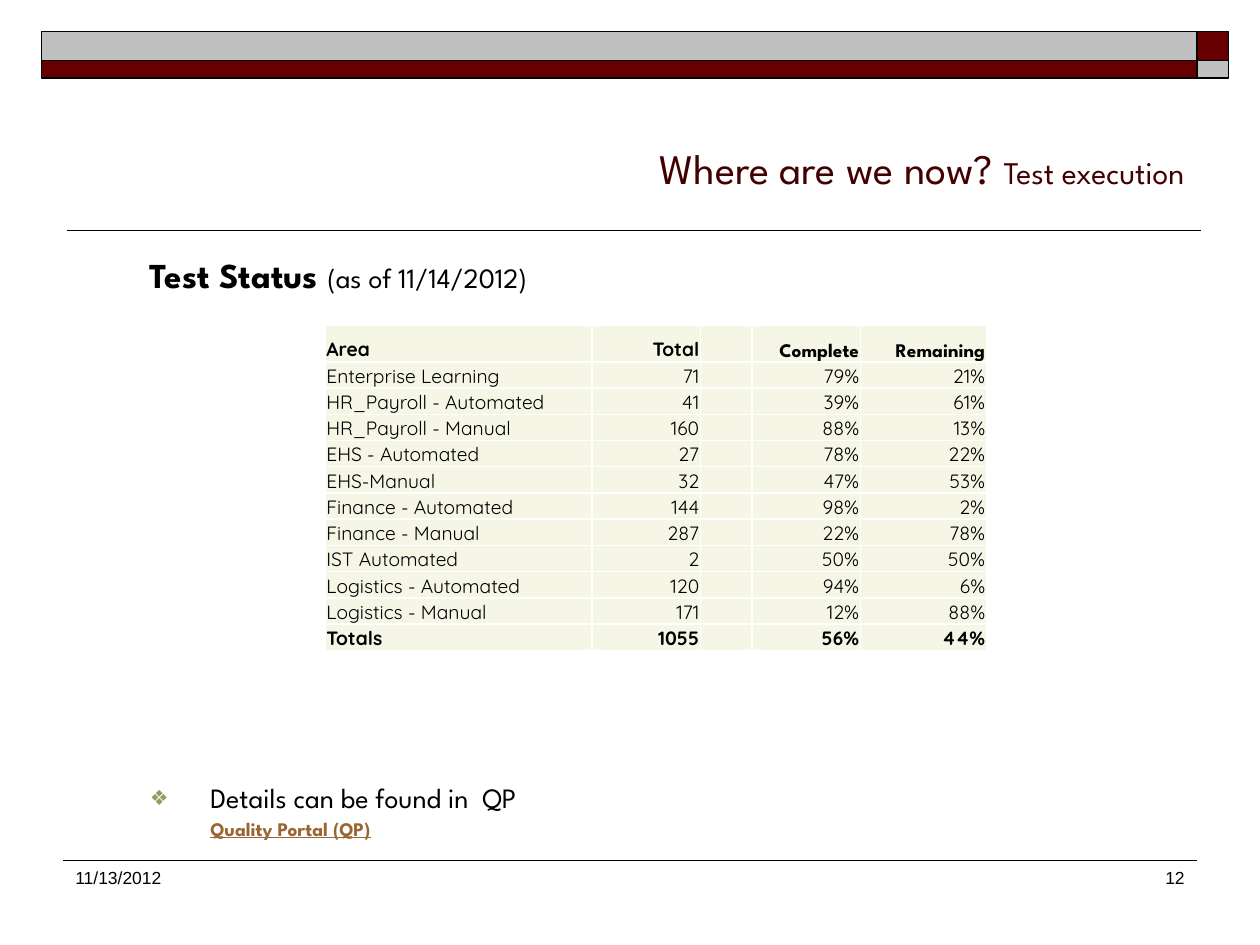
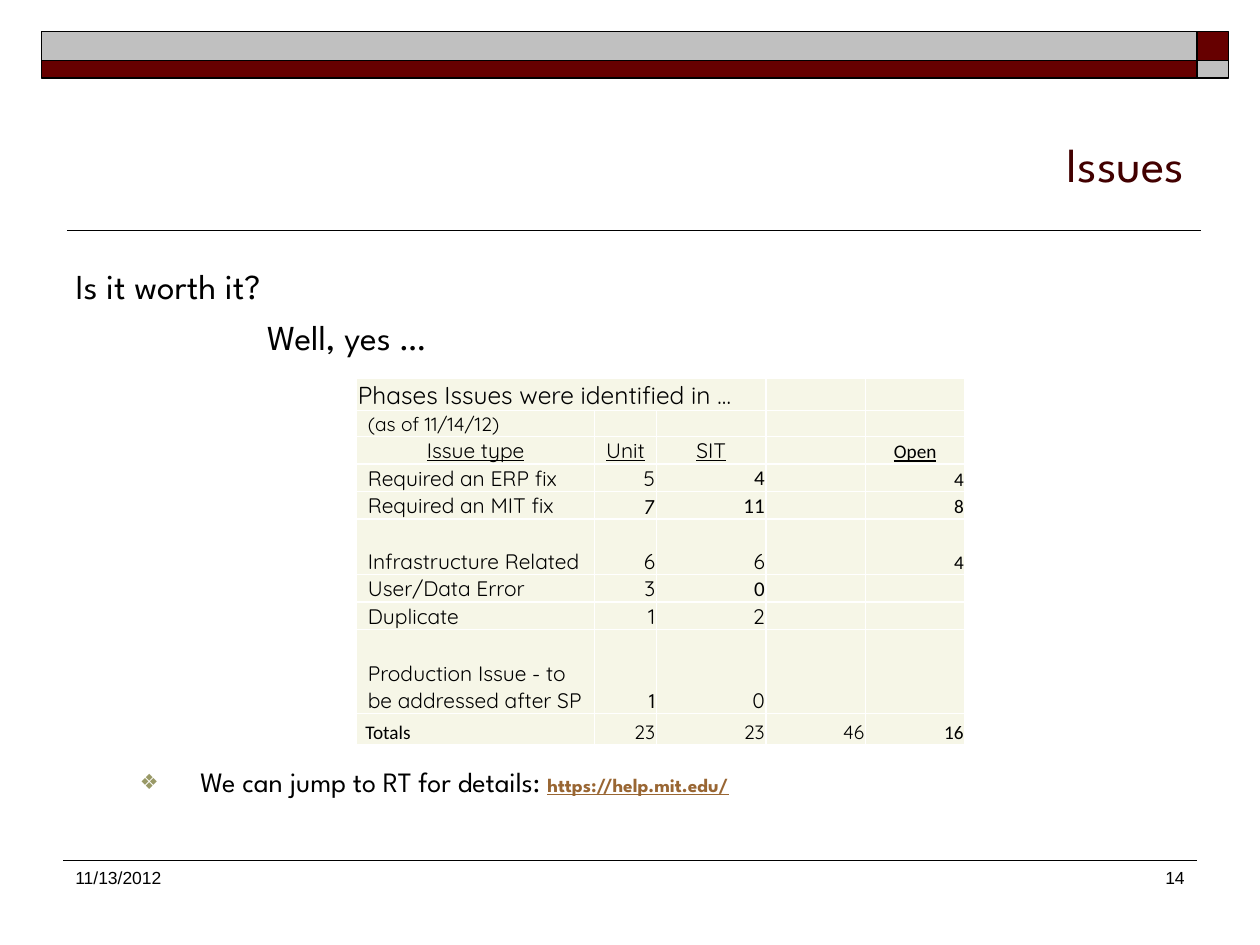
import pptx
import pptx.util
import pptx.dml.color
import pptx.enum.shapes
import pptx.enum.text
import pptx.oxml.ns
import lxml.etree

Inches, Pt = pptx.util.Inches, pptx.util.Pt
ALIGN = pptx.enum.text.PP_ALIGN
ANCHOR = pptx.enum.text.MSO_ANCHOR
qn = pptx.oxml.ns.qn

# ---- Shared look ----
COLORS = {"maroon": "660000", "silver": "C0C0C0", "title": "420000", "ink": "000000",
          "bullet": "999966", "link": "996633", "cell": "F6F6E7", "grid": "FFFFFF"}
HEAD, CELL, NUM, FOOT = "League Spartan", "Quicksand", "Calibri", "Arial"
WIDTH, HEIGHT = 10, 7.5
MARGIN = 0.05 * WIDTH
FOOTER_TOP = 6.83
BAND_X = [0.33, 9.5, 9.75]
BAND_Y = [0.25, 0.48, 0.62]
BAND_FILLS = [["silver", "maroon"], ["maroon", "silver"]]
DATE = "11/13/2012"

LINK = {"size": 11, "bold": True, "underline": True, "color": "link"}

# ---- Content: test status ----
STATUS_ROWS = [
    ["Area", "Total", "", "Complete", "Remaining"],
    ["Enterprise Learning", "71", "", "79%", "21%"],
    ["HR_Payroll - Automated", "41", "", "39%", "61%"],
    ["HR_Payroll - Manual", "160", "", "88%", "13%"],
    ["EHS - Automated", "27", "", "78%", "22%"],
    ["EHS-Manual", "32", "", "47%", "53%"],
    ["Finance - Automated", "144", "", "98%", "2%"],
    ["Finance - Manual", "287", "", "22%", "78%"],
    ["IST Automated", "2", "", "50%", "50%"],
    ["Logistics - Automated", "120", "", "94%", "6%"],
    ["Logistics - Manual", "171", "", "12%", "88%"],
    ["Totals", "1055", "", "56%", "44%"],
]

# ---- Content: issues ----
ISSUE_ROWS = [
    ["Phases Issues were identified in …", "", "", "", ""],
    ["(as of 11/14/12)", "", "", "", ""],
    ["Issue type", "Unit", "SIT", "", "Open"],
    ["Required an ERP fix", "5", "4", "", "4"],
    ["Required an MIT fix", "7", "11", "", "8"],
    ["Infrastructure Related", "6", "6", "", "4"],
    ["User/Data Error", "3", "0", "", ""],
    ["Duplicate", "1", "2", "", ""],
    ["Production Issue - to be addressed after SP", "1", "0", "", ""],
    ["Totals", "23", "23", "46", "16"],
]
ISSUE_FONTS = {(3, 2): NUM, (4, 2): NUM, (6, 2): NUM, (9, 0): NUM,
               (4, 1): HEAD, (8, 1): HEAD}


def status_style(row, col):
    return {"font": HEAD if row == 0 and col > 2 else CELL, "size": 11,
            "bold": row in (0, len(STATUS_ROWS) - 1),
            "align": ALIGN.RIGHT if col else ALIGN.LEFT}


def issue_style(row, col):
    last = len(ISSUE_ROWS) - 1
    heading = row == 2
    small = row in (1, last) or col == 4
    style = {"font": ISSUE_FONTS.get((row, col), NUM if col == 4 else CELL),
             "size": 14 if row == 0 else 11 if small else 12,
             "underline": heading,
             "align": ALIGN.CENTER if heading else ALIGN.RIGHT if col else ALIGN.LEFT}
    if col == 0 and row not in (0, 2):
        style["inset"] = 0.07 if row == last else 0.09
    return style


# Body lines: indent in inches, space before in points, runs of (text, style)
SLIDES = [
    {"number": "12",
     "title": [("Where are we now? ", 24), ("Test execution", 18)],
     "body_at": (0.58, 2, 8.92, 4.62),
     "body": [
         {"indent": 0.51, "spacing": 0.9,
          "runs": [("Test Status ", {"size": 20, "bold": True}),
                   ("(as of 11/14/2012)", {"size": 16})]},
         {"indent": 0.99, "spacing": 0.9, "before": 279, "bullet": True,
          "runs": [("Details can be found in\u00a0 QP".replace("\u00a0", " "), {"size": 16})]},
         {"indent": 0.99, "spacing": 0.9, "before": 2.75,
          "runs": [("Quality Portal (QP)", LINK)]}],
     "table": {"at": (2.58, 2.58), "cols": [2.12, 0.86, 0.41, 0.86, 1],
               "heights": [21] + [15] * 11, "cells": STATUS_ROWS,
               "style": status_style, "merge": None}},
    {"number": "14",
     "title": [("Issues", 28)],
     "body_at": (0.5, 2.05, 9, 4.7),
     "body": [
         {"indent": 0, "runs": [("Is it worth it?", {"size": 20})]},
         {"indent": 1.52, "before": 5, "runs": [("Well, yes …", {"size": 20})]},
         {"indent": 0.99, "spacing": 0.9, "before": 235, "bullet": True,
          "runs": [("We can jump to RT for details: ", {"size": 16}),
                   ("https://help.mit.edu/", LINK)]}],
     "table": {"at": (2.83, 3), "cols": [1.89, 0.49, 0.87, 0.79, 0.79],
               "heights": [18.5, 15] + [15.75] * 3 + [31.5] + [15.75] * 2 + [48, 18],
               "cells": ISSUE_ROWS, "style": issue_style, "merge": (0, 2)}},
]


# ---- Helpers ----
def rgb(name):
    return pptx.dml.color.RGBColor.from_string(COLORS[name])


def add_run(paragraph, text, size, font=HEAD, color="ink", bold=False, underline=False):
    run = paragraph.add_run()
    run.text = text
    run.font.name, run.font.size = font, Pt(size)
    run.font.bold, run.font.underline = bold, underline
    run.font.color.rgb = rgb(color)


def place(shape, box):
    shape.left, shape.top, shape.width, shape.height = map(Inches, box)


def add_rule(slide, left, right, y, weight):
    rule = slide.shapes.add_connector(pptx.enum.shapes.MSO_CONNECTOR.STRAIGHT,
                                      Inches(left), Inches(y), Inches(right), Inches(y))
    rule.line.color.rgb = rgb("ink")
    rule.line.width = Pt(weight)
    lxml.etree.SubElement(rule._element.spPr, qn("a:effectLst"))


def set_bullet(paragraph, shown):
    props = paragraph._p.get_or_add_pPr()
    if not shown:
        lxml.etree.SubElement(props, qn("a:buNone"))
        return
    color = lxml.etree.SubElement(props, qn("a:buClr"))
    lxml.etree.SubElement(color, qn("a:srgbClr"), val=COLORS["bullet"])
    lxml.etree.SubElement(props, qn("a:buSzPct"), val="75000")
    lxml.etree.SubElement(props, qn("a:buChar"), char="❖")


def set_borders(cell):
    props = cell._tc.get_or_add_tcPr()
    for index, side in enumerate(("lnL", "lnR", "lnT", "lnB")):
        border = lxml.etree.Element(qn("a:" + side), w=str(Pt(1)))
        fill = lxml.etree.SubElement(border, qn("a:solidFill"))
        lxml.etree.SubElement(fill, qn("a:srgbClr"), val=COLORS["grid"])
        props.insert(index, border)


# ---- Parts of a slide ----
def add_frame(slide, number):
    for y, bottom, fills in zip(BAND_Y, BAND_Y[1:], BAND_FILLS):
        for x, right, fill in zip(BAND_X, BAND_X[1:], fills):
            band = slide.shapes.add_shape(pptx.enum.shapes.MSO_SHAPE.RECTANGLE, 0, 0, 0, 0)
            place(band, (x, y, right - x, bottom - y))
            band.shadow.inherit = False
            band.fill.solid()
            band.fill.fore_color.rgb = rgb(fill)
            band.line.color.rgb = rgb("ink")
            band.line.width = Pt(1)
    add_rule(slide, 0.53, 9.53, 1.83, 1)
    add_rule(slide, MARGIN, WIDTH - MARGIN, FOOTER_TOP, 0.75)
    for text, left, width, align in ((DATE, MARGIN, 1.83, ALIGN.LEFT),
                                     (number, 7.42, 2.08, ALIGN.RIGHT)):
        footer = slide.shapes.add_textbox(0, 0, 0, 0)
        place(footer, (left, FOOTER_TOP, width, 0.5))
        footer.text_frame.word_wrap = True
        paragraph = footer.text_frame.paragraphs[0]
        paragraph.alignment = align
        add_run(paragraph, text, 10, FOOT)


def fill_title(title, runs):
    place(title, (MARGIN, 0.58, WIDTH - 2 * MARGIN, 1))
    frame = title.text_frame
    frame.auto_size = pptx.enum.text.MSO_AUTO_SIZE.NONE
    frame.vertical_anchor = ANCHOR.BOTTOM
    frame.paragraphs[0].alignment = ALIGN.RIGHT
    for text, size in runs:
        add_run(frame.paragraphs[0], text, size, color="title")


def fill_body(body, box, lines):
    place(body, box)
    frame = body.text_frame
    frame.auto_size = pptx.enum.text.MSO_AUTO_SIZE.NONE
    for index, line in enumerate(lines):
        paragraph = frame.add_paragraph() if index else frame.paragraphs[0]
        bulleted = line.get("bullet", False)
        set_bullet(paragraph, bulleted)
        props = paragraph._p.get_or_add_pPr()
        props.set("marL", str(Inches(line["indent"])))
        props.set("indent", str(Inches(-0.48 if bulleted else 0)))
        paragraph.line_spacing = line.get("spacing", 1.0)
        paragraph.space_before = Pt(line.get("before", 0))
        for text, style in line["runs"]:
            add_run(paragraph, text, **style)


def add_grid(slide, at, cols, heights, cells, style, merge):
    left, top = map(Inches, at)
    table = slide.shapes.add_table(len(heights), len(cols), left, top,
                                   Inches(sum(cols)), Pt(sum(heights))).table
    table.first_row = table.horz_banding = False
    for column, width in zip(table.columns, cols):
        column.width = Inches(width)
    for row, height in zip(table.rows, heights):
        row.height = Pt(height)
    for r, texts in enumerate(cells):
        for c, text in enumerate(texts):
            cell, look = table.cell(r, c), style(r, c)
            cell.fill.solid()
            cell.fill.fore_color.rgb = rgb("cell")
            set_borders(cell)
            cell.vertical_anchor = ANCHOR.BOTTOM
            cell.margin_left = Inches(look.pop("inset", 0.01))
            cell.margin_top = cell.margin_right = Inches(0.01)
            cell.margin_bottom = 0
            paragraph = cell.text_frame.paragraphs[0]
            paragraph.alignment = look.pop("align")
            if text:
                add_run(paragraph, text, **look)
            else:  # keeps an empty cell from stretching its row
                lxml.etree.SubElement(paragraph._p, qn("a:endParaRPr"), sz="1000")
    if merge:
        row, last_col = merge
        table.cell(row, 0).merge(table.cell(row, last_col))


def main():
    deck = pptx.Presentation()
    deck.slide_width, deck.slide_height = Inches(WIDTH), Inches(HEIGHT)
    for content in SLIDES:
        slide = deck.slides.add_slide(deck.slide_layouts[1])
        add_frame(slide, content["number"])
        fill_title(slide.shapes.title, content["title"])
        fill_body(slide.placeholders[1], content["body_at"], content["body"])
        add_grid(slide, **content["table"])
    deck.save("out.pptx")


if __name__ == "__main__":
    main()
